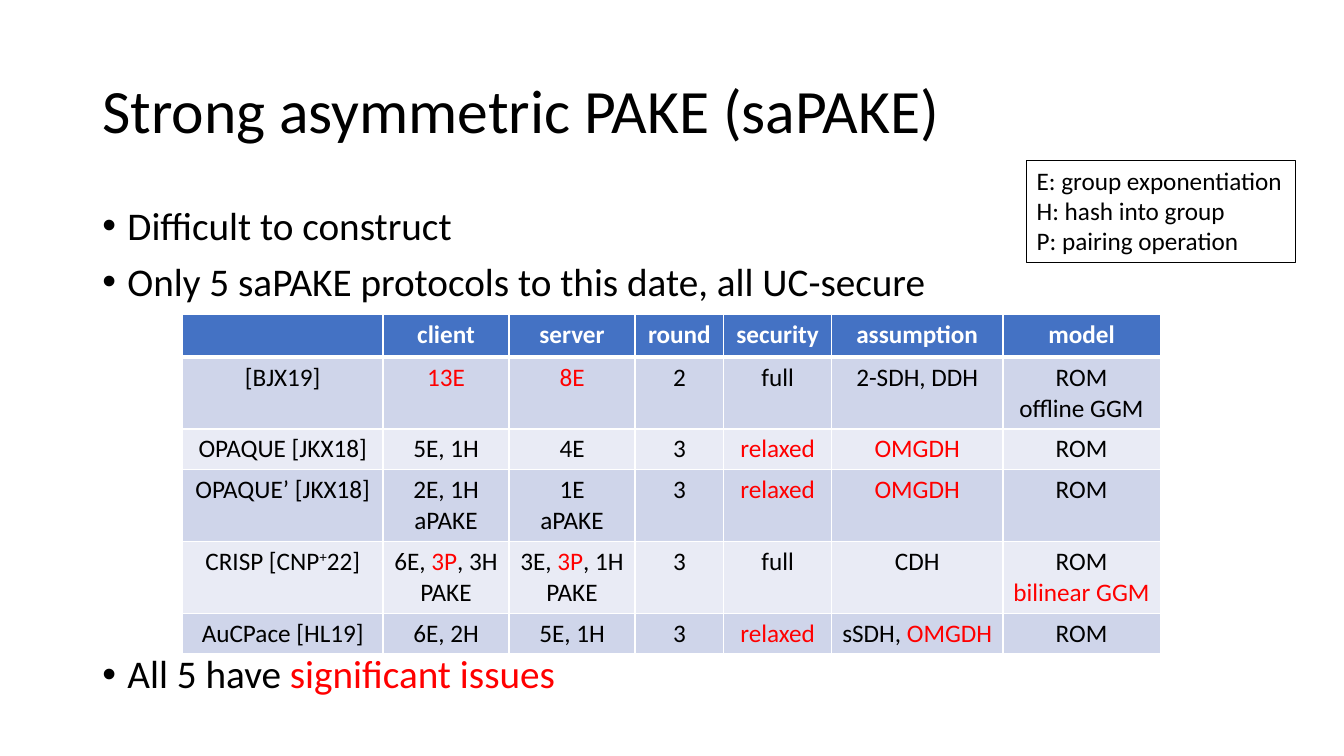
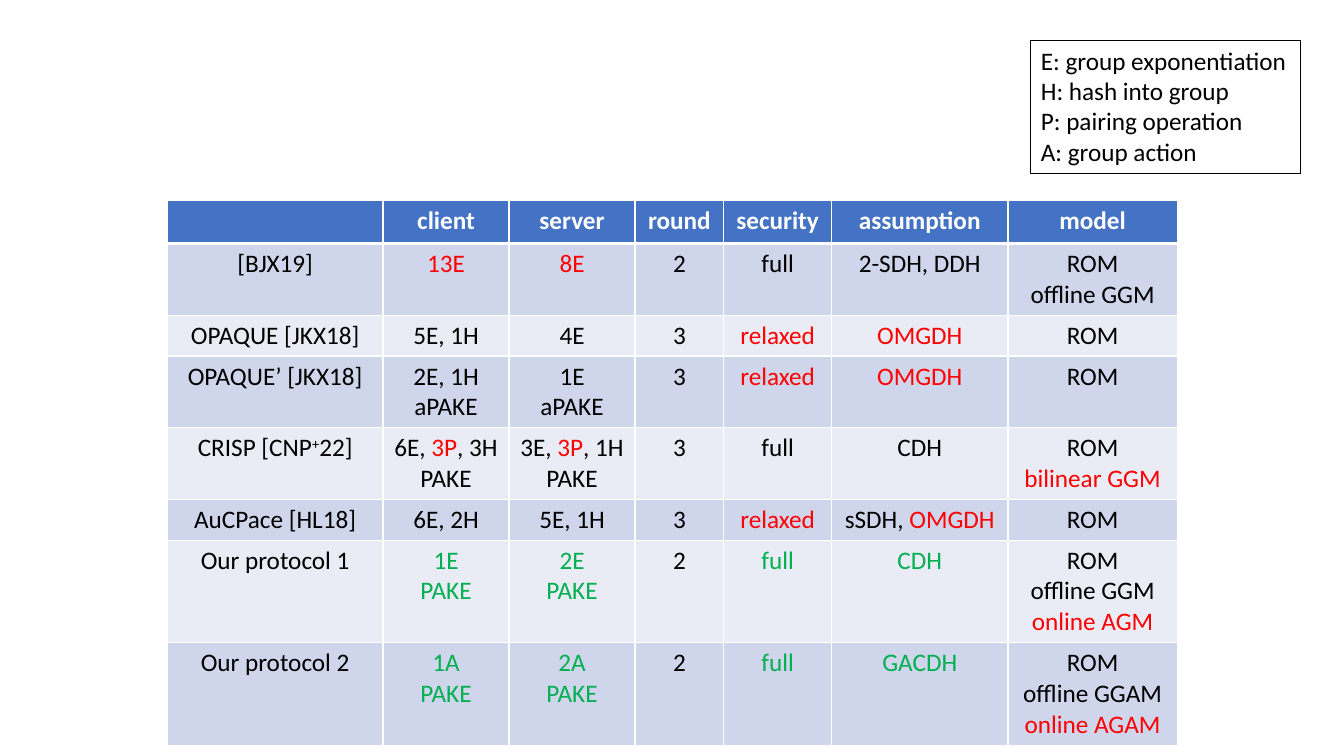
from lxml.etree import SubElement
from pptx import Presentation
from pptx.dml.color import RGBColor
from pptx.enum.text import MSO_ANCHOR, MSO_AUTO_SIZE, PP_ALIGN
from pptx.oxml.ns import qn
from pptx.util import Pt

# Shared look
FONT = "Calibri"
BLACK, WHITE, RED, GREEN = "000000", "FFFFFF", "FF0000", "00B050"
HEADER_FILL, BAND_FILLS = "4472C4", ("CFD5EA", "E9EBF5")
MARKS = {"*": RED, "~": GREEN, "^": BLACK}  # ^ also raises the text
SMALL, BODY, TITLE = 18, 28, 44

# Content: "|" parts a line into spans, a leading mark styles a span
LEGEND = ["E: group exponentiation", "H: hash into group", "P: pairing operation"]
HEADINGS = ["", "client", "server", "round", "security", "assumption", "model"]
KNOWN_PROTOCOLS = [
    ["[BJX19]", "*13E", "*8E", "2", "full", "2-SDH, DDH", "ROM\noffline GGM"],
    ["OPAQUE [JKX18]", "5E, 1H", "4E", "3", "*relaxed", "*OMGDH", "ROM"],
    ["OPAQUE’ [JKX18]", "2E, 1H\naPAKE", "1E\naPAKE", "3", "*relaxed", "*OMGDH", "ROM"],
    ["CRISP [CNP|^+|22]", "6E, |*3P|, 3H\nPAKE", "3E, |*3P|, 1H\nPAKE", "3", "full",
     "CDH", "ROM\n*bilinear GGM"],
]
AUCPACE_VALUES = ["6E, 2H", "5E, 1H", "3", "*relaxed", "sSDH, |*OMGDH", "ROM"]
OUR_PROTOCOLS = [
    ["Our protocol 1", "~1E\n~PAKE", "~2E\n~PAKE", "2", "~full", "~CDH",
     "ROM\noffline GGM\n*online AGM"],
    ["Our protocol 2", "~1A\n~PAKE", "~2A\n~PAKE", "2", "~full", "~GACDH",
     "ROM\noffline GGAM\n*online AGAM"],
]


def colour(value):
    return RGBColor.from_string(value)


def apply_format(target, values):
    for name, value in values.items():
        setattr(target, name, value)


def write_line(para, text, size, base=BLACK, bold=False, **layout):
    """Fill one paragraph with its styled spans."""
    apply_format(para, layout)
    for part in text.split("|") if text else []:
        mark = part[0] if part[0] in MARKS else ""
        span = para.add_run()
        span.text = part[len(mark):]
        apply_format(span.font, {"name": FONT, "size": Pt(size), "bold": bold})
        span.font.color.rgb = colour(MARKS.get(mark, base))
        if mark == "^":
            span.font._element.set("baseline", "30000")


def write_lines(frame, lines, size, **style):
    for index, line in enumerate(lines):
        para = frame.paragraphs[0] if index == 0 else frame.add_paragraph()
        write_line(para, line, size, **style)


def add_text(page, area, lines, size, anchor=MSO_ANCHOR.TOP, **style):
    box = page.shapes.add_textbox(*map(Pt, area))
    apply_format(box.text_frame, {"word_wrap": True, "vertical_anchor": anchor})
    write_lines(box.text_frame, lines, size, **style)
    return box


def add_bullets(page, area, lines, gap_before_last):
    box = add_text(page, area, lines, BODY, line_spacing=0.9, space_before=Pt(10))
    paras = box.text_frame.paragraphs
    paras[-1].space_before = Pt(gap_before_last)
    for para in paras:
        properties = para._p.get_or_add_pPr()
        properties.set("marL", str(Pt(18)))
        properties.set("indent", str(Pt(-18)))
        SubElement(properties, qn("a:buFont")).set("typeface", "Arial")
        SubElement(properties, qn("a:buChar")).set("char", "•")


def add_legend(page, left, top, lines):
    box = add_text(page, (left, top, 192.3, 7.2 + 22 * len(lines)), lines, SMALL)
    box.text_frame.auto_size = MSO_AUTO_SIZE.SHAPE_TO_FIT_TEXT
    box.line.color.rgb = colour(BLACK)
    box.line.width = Pt(0.75)


def set_borders(cell, top, bottom):
    """Draw white cell edges; they must precede the fill in the XML."""
    properties = cell._tc.get_or_add_tcPr()
    edges = {"lnL": 1, "lnR": 1, "lnT": top, "lnB": bottom}
    for index, (edge, width) in enumerate(edges.items()):
        line = SubElement(properties, qn("a:" + edge), w=str(Pt(width)))
        fill = SubElement(line, qn("a:solidFill"))
        SubElement(fill, qn("a:srgbClr"), val=WHITE)
        properties.insert(index, line)


def add_comparison(page, left, top, widths, protocols):
    rows = [HEADINGS] + protocols
    heights = [30.6] + [7.2 + 22 * max(text.count("\n") + 1 for text in row)
                        for row in protocols]
    frame = page.shapes.add_table(len(rows), len(widths), Pt(left), Pt(top),
                                  Pt(sum(widths)), Pt(sum(heights)))
    table = frame.table
    for column, width in zip(table.columns, widths):
        column.width = Pt(width)
    for index, (row, height) in enumerate(zip(rows, heights)):
        table.rows[index].height = Pt(height)
        header = index == 0
        for position, text in enumerate(row):
            cell = table.cell(index, position)
            cell.fill.solid()
            cell.fill.fore_color.rgb = colour(HEADER_FILL if header else BAND_FILLS[(index - 1) % 2])
            set_borders(cell, 3 if index == 1 else 1, 3 if header else 1)
            write_lines(cell.text_frame, text.split("\n"), SMALL, bold=header,
                        base=WHITE if header else BLACK, alignment=PP_ALIGN.CENTER)


def main():
    deck = Presentation()
    apply_format(deck, {"slide_width": Pt(960), "slide_height": Pt(540)})
    blank = deck.slide_layouts[6]

    # Existing protocols
    page = deck.slides.add_slide(blank)
    add_text(page, (66, 28.8, 828, 104.4), ["Strong asymmetric PAKE (saPAKE)"], TITLE,
             anchor=MSO_ANCHOR.MIDDLE, line_spacing=0.9)
    add_bullets(page, (66, 143.8, 828, 342.6),
                ["Difficult to construct", "Only 5 saPAKE protocols to this date, all UC-secure",
                 "All 5 have |*significant issues"], gap_before_last=250)
    add_comparison(page, 130.3, 224.6, [143.3, 90, 90, 63.4, 77, 122.4, 112.3],
                   KNOWN_PROTOCOLS + [["AuCPace [HL19]"] + AUCPACE_VALUES])
    add_legend(page, 733.4, 114.5, LEGEND)

    # Comparison with the new protocols
    page = deck.slides.add_slide(blank)
    add_comparison(page, 119.5, 143.3, [154.1, 90, 90, 63.4, 77, 126, 121],
                   KNOWN_PROTOCOLS + [["AuCPace [HL18]"] + AUCPACE_VALUES] + OUR_PROTOCOLS)
    add_legend(page, 736.4, 28.8, LEGEND + ["A: group action"])

    deck.save("out.pptx")


if __name__ == "__main__":
    main()
